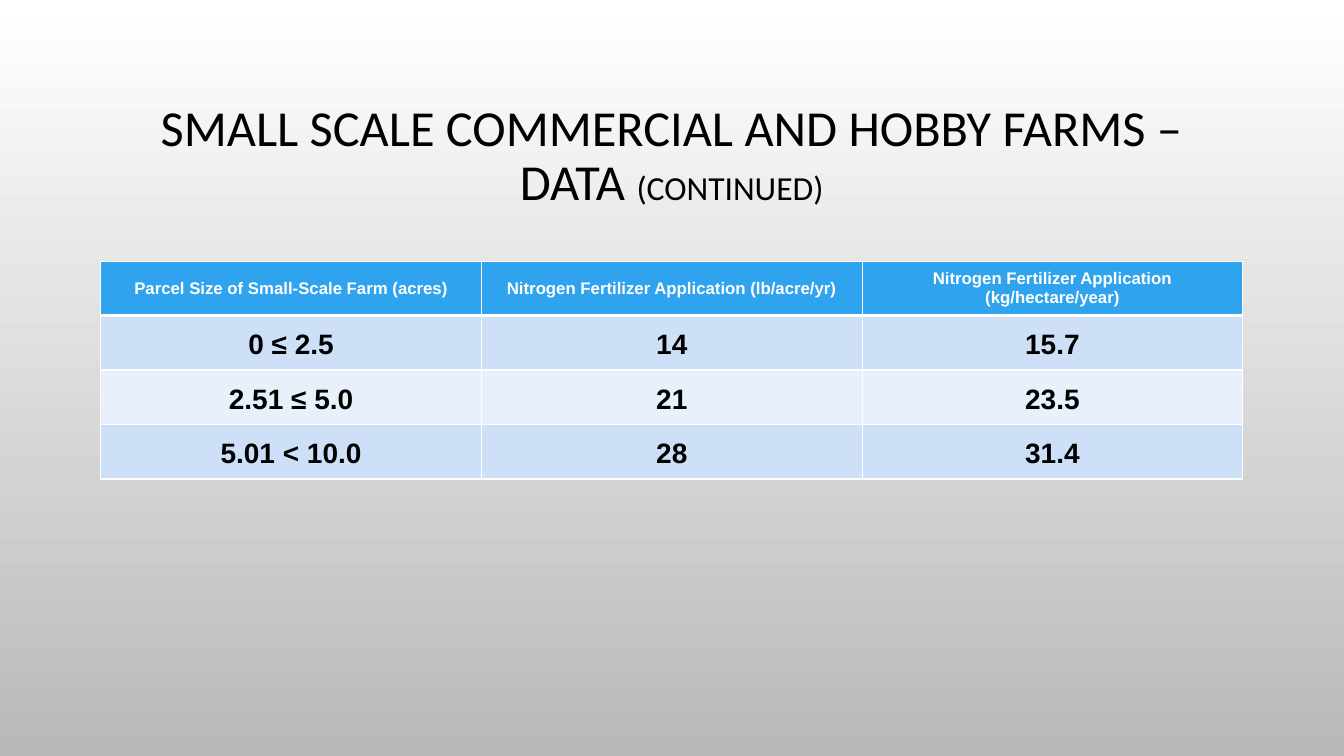
from dataclasses import dataclass

from lxml import etree
from pptx import Presentation
from pptx.dml.color import RGBColor
from pptx.enum.text import MSO_ANCHOR, PP_ALIGN
from pptx.oxml.ns import qn
from pptx.util import Cm, Pt

MIDDLE = MSO_ANCHOR.MIDDLE
CENTER = PP_ALIGN.CENTER
WHITE, BLACK, GREY = "FFFFFF", "000000", "B9B9B9"
BLUE, PALE, FAINT = "2FA3EE", "CDE0F8", "E8F0FC"
LEFT, WIDTH = Cm(2.54), Cm(28.78)
INSET = Cm(0.23)


@dataclass
class Row:
    texts: tuple[str, ...]
    fill: str = PALE
    color: str = BLACK
    size: int = 20
    spacing: float = 1.15
    edge: float = 1


ROWS = [
    Row(("Parcel Size of Small-Scale Farm (acres)",
         "Nitrogen Fertilizer Application (lb/acre/yr)",
         "Nitrogen Fertilizer Application (kg/hectare/year)"),
        BLUE, WHITE, 12, 1.0, 3),
    Row(("0 ≤ 2.5", "14", "15.7")),
    Row(("2.51 ≤ 5.0", "21", "23.5"), FAINT),
    Row(("5.01 < 10.0", "28", "31.4")),
]


def paint(target, color: str) -> None:
    """Give a font colour, solid fill or gradient stop its hex colour."""
    target.rgb = RGBColor.from_string(color)


def apply(target, values: dict) -> None:
    for name, value in values.items():
        setattr(target, name, value)


def style(font, name: str, size: int, color: str, bold: bool) -> None:
    apply(font, {"name": name, "size": Pt(size), "bold": bold})
    paint(font.color, color)


def border(cell, top: float, bottom: float) -> None:
    """Draw white cell borders, with widths in points."""
    props = cell._tc.get_or_add_tcPr()
    widths = {"a:lnL": 1, "a:lnR": 1, "a:lnT": top, "a:lnB": bottom}
    for spot, (tag, width) in enumerate(widths.items()):
        line = etree.Element(qn(tag), w=str(Pt(width)))
        fill = etree.SubElement(line, qn("a:solidFill"))
        etree.SubElement(fill, qn("a:srgbClr"), val=WHITE)
        props.insert(spot, line)


def fill_cell(cell, text: str, row: Row, top: float) -> None:
    apply(cell, {"text": text, "vertical_anchor": MIDDLE,
                 "margin_left": INSET, "margin_right": INSET,
                 "margin_top": 0, "margin_bottom": 0})
    cell.fill.solid()
    paint(cell.fill.fore_color, row.fill)
    border(cell, top, row.edge)
    para = cell.text_frame.paragraphs[0]
    apply(para, {"alignment": CENTER, "line_spacing": row.spacing})
    style(para.runs[0].font, "Arial", row.size, row.color, True)


def add_title(slide) -> None:
    title = slide.shapes.title
    apply(title, {"left": LEFT, "top": Cm(1.73),
                  "width": WIDTH, "height": Cm(4.45)})
    apply(title.text_frame, {"vertical_anchor": MIDDLE, "word_wrap": True})
    para = title.text_frame.paragraphs[0]
    apply(para, {"alignment": CENTER, "line_spacing": 0.9})
    parts = (("SMALL SCALE COMMERCIAL AND HOBBY FARMS –DATA ", 36),
             ("(CONTINUED)", 24))
    for text, size in parts:
        run = para.add_run()
        run.text = text
        style(run.font, "Calibri", size, BLACK, False)


def add_rates(slide) -> None:
    """Add the table of fertilizer rates."""
    count = len(ROWS[0].texts)
    table = slide.shapes.add_table(
        len(ROWS), count, LEFT, Cm(6.58), WIDTH, Cm(5.49)).table
    top = 1
    for r, row in enumerate(ROWS):
        for c, text in enumerate(row.texts):
            fill_cell(table.cell(r, c), text, row, top)
        top = row.edge


def main() -> None:
    deck = Presentation()
    apply(deck, {"slide_width": Cm(33.87), "slide_height": Cm(19.05)})
    slide = deck.slides.add_slide(deck.slide_layouts[5])
    fill = slide.background.fill
    fill.gradient()
    fill.gradient_angle = 270
    for stop, color in zip(fill.gradient_stops, (WHITE, GREY)):
        paint(stop.color, color)
    add_title(slide)
    add_rates(slide)
    deck.save("out.pptx")


if __name__ == "__main__":
    main()
